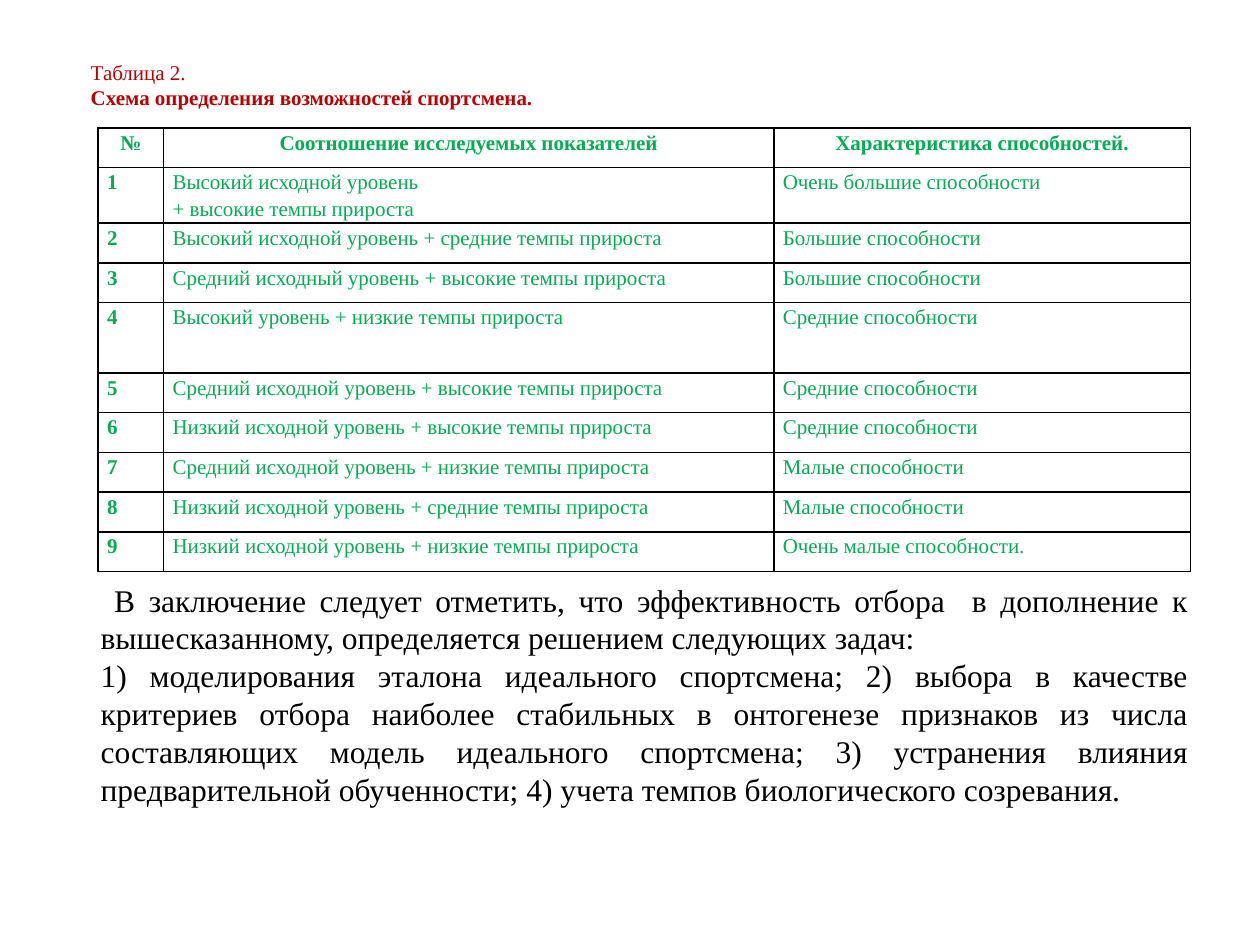
from dataclasses import dataclass

from lxml.etree import SubElement
from pptx import Presentation
from pptx.dml.color import RGBColor
from pptx.enum.text import MSO_AUTO_SIZE as AutoSize, PP_ALIGN as Align
from pptx.oxml.ns import qn
from pptx.util import Cm, Pt


@dataclass(frozen=True)
class Theme:
    font: str = "Times New Roman"
    title_color: str = "C00000"
    table_color: str = "00B050"
    body_color: str = "000000"
    border_color: str = "000000"
    small_size: int = 12
    body_size: int = 18
    border_width: int = 1


THEME = Theme()

HEADERS = ["№", "Соотношение исследуемых показателей", "Характеристика способностей."]
ABILITIES = [
    (["Высокий исходной уровень ", "+ высокие темпы прироста"], "Очень большие способности"),
    (["Высокий исходной уровень + средние темпы прироста"], "Большие способности"),
    (["Средний исходный уровень + высокие темпы прироста"], "Большие способности"),
    (["Высокий уровень + низкие темпы прироста"], "Средние способности"),
    (["Средний исходной уровень + высокие темпы прироста"], "Средние способности"),
    (["Низкий исходной уровень + высокие темпы прироста"], "Средние способности"),
    (["Средний исходной уровень + низкие темпы прироста"], "Малые способности"),
    (["Низкий исходной уровень + средние темпы прироста"], "Малые способности"),
    (["Низкий исходной уровень + низкие темпы прироста"], "Очень малые способности."),
]
COLUMN_WIDTHS = [1.32, 12.3, 8.4]
ROW_HEIGHT = 0.8
TALL_ROWS = {1: 1.12, 4: 1.42}

CONCLUSION = [
    " В заключение следует отметить, что эффективность отбора  в дополнение к "
    "вышесказанному, определяется решением следующих задач: ",
    "1) моделирования эталона идеального спортсмена; 2) выбора в качестве критериев "
    "отбора наиболее стабильных в онтогенезе признаков из числа составляющих модель "
    "идеального спортсмена; 3) устранения влияния предварительной обученности; "
    "4) учета темпов биологического созревания.",
]


def write_text(paragraph, text, size, color, bold=False, align=Align.LEFT, spacing=None):
    paragraph.alignment = align
    paragraph.line_spacing = spacing
    run = paragraph.add_run()
    run.text = text
    run.font.name = THEME.font
    run.font.size = Pt(size)
    run.font.bold = bold
    run.font.color.rgb = RGBColor.from_string(color)


def next_paragraph(text_frame, index):
    return text_frame.add_paragraph() if index else text_frame.paragraphs[0]


def add_text_box(slide, left, top, width, height):
    text_frame = slide.shapes.add_textbox(Cm(left), Cm(top), Cm(width), Cm(height)).text_frame
    text_frame.word_wrap = True
    text_frame.auto_size = AutoSize.NONE
    return text_frame


def draw_borders(cell):
    properties = cell._tc.get_or_add_tcPr()
    for side in ("a:lnL", "a:lnR", "a:lnT", "a:lnB"):
        line = SubElement(properties, qn(side), w=str(Pt(THEME.border_width)))
        fill = SubElement(line, qn("a:solidFill"))
        SubElement(fill, qn("a:srgbClr"), val=THEME.border_color)


def fill_cell(cell, lines, bold, align):
    draw_borders(cell)
    cell.fill.background()
    cell.margin_left = cell.margin_right = Cm(0.18)
    cell.margin_top = cell.margin_bottom = 0
    for index, line in enumerate(lines):
        write_text(next_paragraph(cell.text_frame, index), line, THEME.small_size,
                   THEME.table_color, bold=bold, align=align, spacing=1.15)


def add_title(slide):
    text_frame = add_text_box(slide, 1.58, 1, 22, 2.05)
    text_frame.margin_top = Cm(0.2)
    write_text(text_frame.paragraphs[0], "Таблица 2.", THEME.small_size, THEME.title_color)
    write_text(text_frame.add_paragraph(), "Схема определения возможностей спортсмена.",
               THEME.small_size, THEME.title_color, bold=True)


def add_abilities_table(slide):
    rows = [[[header] for header in HEADERS]]
    rows += [[[str(number)], ratio, [ability]]
             for number, (ratio, ability) in enumerate(ABILITIES, start=1)]
    heights = [TALL_ROWS.get(index, ROW_HEIGHT) for index in range(len(rows))]
    table = slide.shapes.add_table(len(rows), len(HEADERS), Cm(1.98), Cm(2.58),
                                   Cm(sum(COLUMN_WIDTHS)), Cm(sum(heights))).table
    table.first_row = table.horz_banding = False
    for column, width in zip(table.columns, COLUMN_WIDTHS):
        column.width = Cm(width)
    for row_index, (row, height) in enumerate(zip(rows, heights)):
        table.rows[row_index].height = Cm(height)
        is_header = row_index == 0
        for column_index, lines in enumerate(row):
            fill_cell(table.cell(row_index, column_index), lines,
                      bold=is_header or column_index == 0,
                      align=Align.CENTER if is_header else Align.JUSTIFY)


def add_conclusion(slide):
    text_frame = add_text_box(slide, 1.78, 11.58, 22.43, 4.88)
    for index, text in enumerate(CONCLUSION):
        write_text(next_paragraph(text_frame, index), text, THEME.body_size,
                   THEME.body_color, align=Align.JUSTIFY)


def main():
    presentation = Presentation()
    presentation.slide_width, presentation.slide_height = Cm(25.4), Cm(19.05)
    slide = presentation.slides.add_slide(presentation.slide_layouts[6])

    # Table and its heading
    add_abilities_table(slide)
    add_title(slide)

    # Closing remarks
    add_conclusion(slide)

    presentation.save("out.pptx")


if __name__ == "__main__":
    main()
